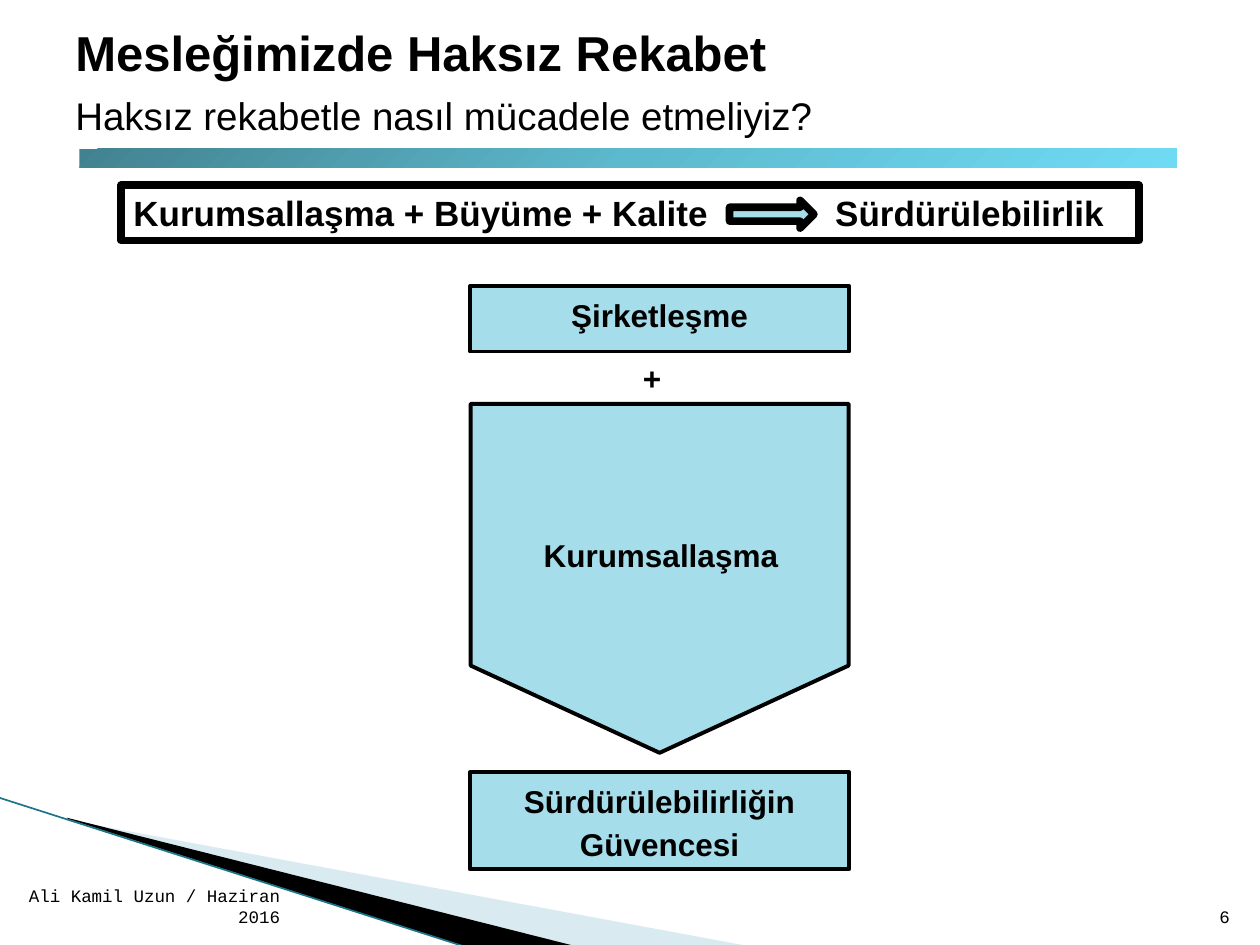
import copy
from dataclasses import dataclass
from typing import Optional

import lxml.etree
import pptx
import pptx.dml.color
import pptx.enum.shapes
import pptx.enum.text
import pptx.oxml.ns
import pptx.util

Inches = pptx.util.Inches
Pt = pptx.util.Pt
Shapes = pptx.enum.shapes.MSO_SHAPE
Align = pptx.enum.text.PP_ALIGN
Anchor = pptx.enum.text.MSO_ANCHOR
qn = pptx.oxml.ns.qn

BLACK, WHITE, AQUA = "000000", "FFFFFF", "A6DDEA"


@dataclass
class Line:
    words: str
    size: float
    bold: bool = True
    font: str = "Arial"
    align: Align = Align.CENTER
    before: float = 0
    after: float = 0
    tab: Optional[float] = None


@dataclass
class Block:
    left: float
    top: float
    width: float
    height: float
    kind: Shapes = Shapes.RECTANGLE
    fill: str = AQUA
    border: float = 0
    rotation: float = 0
    lines: tuple[Line, ...] = ()
    inset: tuple[float, float] = (0.08, 0.08)


def color(hex_value: str) -> pptx.dml.color.RGBColor:
    return pptx.dml.color.RGBColor.from_string(hex_value)


def write(frame, lines: tuple[Line, ...], inset=(0.1, 0.05), anchor=Anchor.TOP, wrap=True) -> None:
    frame.word_wrap = wrap
    frame.vertical_anchor = anchor
    frame.margin_left = frame.margin_right = Inches(inset[0])
    frame.margin_top = frame.margin_bottom = Inches(inset[1])
    for index, line in enumerate(lines):
        paragraph = frame.add_paragraph() if index else frame.paragraphs[0]
        paragraph.alignment = line.align
        paragraph.space_before = Pt(line.before)
        paragraph.space_after = Pt(line.after)
        if line.tab:
            tabs = lxml.etree.SubElement(paragraph._p.get_or_add_pPr(), qn("a:tabLst"))
            lxml.etree.SubElement(tabs, qn("a:tab"), pos=str(Inches(line.tab)), algn="l")
        run = paragraph.add_run()
        run.text = line.words
        run.font.name = line.font
        run.font.size = Pt(line.size)
        run.font.bold = line.bold
        run.font.color.rgb = color(BLACK)


def add_text(slide, left: float, top: float, width: float, height: float,
             *lines: Line, anchor=Anchor.TOP, wrap=True) -> None:
    box = slide.shapes.add_textbox(Inches(left), Inches(top), Inches(width), Inches(height))
    write(box.text_frame, lines, anchor=anchor, wrap=wrap)


def add_block(slide, block: Block):
    shape = slide.shapes.add_shape(block.kind, Inches(block.left), Inches(block.top),
                                   Inches(block.width), Inches(block.height))
    shape.shadow.inherit = False
    shape.rotation = block.rotation
    shape.fill.solid()
    shape.fill.fore_color.rgb = color(block.fill)
    if block.border:
        shape.line.color.rgb = color(BLACK)
        shape.line.width = Pt(block.border)
    else:
        shape.line.fill.background()
    if block.lines:
        write(shape.text_frame, block.lines, block.inset)
    return shape


def add_wedge(slide, points: list[tuple[float, float]], fill: str, opacity: int = 100) -> None:
    corners = [(Inches(x), Inches(y)) for x, y in points]
    builder = slide.shapes.build_freeform(*corners[0])
    builder.add_line_segments(corners[1:], close=True)
    wedge = builder.convert_to_shape()
    wedge.shadow.inherit = False
    wedge.line.fill.background()
    wedge.fill.solid()
    wedge.fill.fore_color.rgb = color(fill)
    if opacity < 100:
        tint = wedge._element.spPr.find(qn("a:solidFill"))[0]
        lxml.etree.SubElement(tint, qn("a:alpha"), val=str(opacity * 1000))


def add_gradient_bar(slide) -> None:
    bar = add_block(slide, Block(0.63, 1.18, 8.71, 0.15))
    bar.fill.gradient()
    bar.fill.gradient_angle = 315
    stop_list = bar._element.spPr.find(qn("a:gradFill")).find(qn("a:gsLst"))
    stop_list.insert(1, copy.deepcopy(stop_list[0]))
    colors = ("428290", "5DB9CD", "6FDBF3")
    for stop, position, shade in zip(bar.fill.gradient_stops, (0, 0.5, 1), colors):
        stop.position = position
        stop.color.rgb = color(shade)


def main() -> None:
    deck = pptx.Presentation()
    deck.slide_width, deck.slide_height = Inches(10), Inches(7.5)
    slide = deck.slides.add_slide(deck.slide_layouts[6])

    # Corner decoration
    add_wedge(slide, [(0.55, 6.51), (5.95, 7.51), (4.56, 7.51), (0.55, 6.5)], "A0CBDC", 40)
    add_wedge(slide, [(0.53, 6.49), (4.57, 7.51), (3.72, 7.52), (0.54, 6.5)], BLACK)
    edge = slide.shapes.add_connector(pptx.enum.shapes.MSO_CONNECTOR.STRAIGHT,
                                      Inches(-0.01), Inches(6.33), Inches(3.71), Inches(7.52))
    edge.line.color.rgb = color("1B7587")
    edge.line.width = Pt(0.95)
    lxml.etree.SubElement(edge._element.spPr, qn("a:effectLst"))

    # Footer and page number
    for left, width, words in ((0, 2.32, "Ali Kamil Uzun / Haziran 2016"), (9.46, 0.4, "6")):
        add_text(slide, left, 7.01, width, 0.4,
                 Line(words, 10, False, "Courier New", Align.RIGHT), anchor=Anchor.BOTTOM)

    # Heading
    add_text(slide, 0.5, 0.13, 9, 0.94,
             Line("Mesleğimizde Haksız Rekabet", 28, align=Align.LEFT),
             Line("Haksız rekabetle nasıl mücadele etmeliyiz?", 22, False, align=Align.LEFT, before=6))
    add_gradient_bar(slide)

    # Flow from incorporation to sustainability
    flow = (
        Block(3.73, 6.13, 3.01, 0.77, border=2.25,
              lines=(Line("Sürdürülebilirliğin", 18, after=2.5), Line("Güvencesi", 18))),
        Block(3.73, 2.27, 3.01, 0.52, border=2.25, lines=(Line("Şirketleşme", 18),)),
    )
    for block in flow:
        add_block(slide, block)
    pentagon = add_block(slide, Block(3.85, 3.09, 2.77, 3, Shapes.PENTAGON, border=2.25, rotation=90))
    pentagon.adjustments[0] = 0.25
    add_block(slide, Block(4.02, 4.21, 2.45, 0.38, lines=(Line("Kurumsallaşma", 18),),
                           inset=(0.04, 0.04)))
    add_text(slide, 4.98, 2.8, 0.39, 0.4, Line("+", 18), wrap=False)

    # Formula banner
    add_block(slide, Block(0.96, 1.47, 8.08, 0.44, fill=WHITE, border=4.33, inset=(0.1, 0.05), lines=(
        Line("Kurumsallaşma + Büyüme + Kalite\tSürdürülebilirlik", 20, align=Align.LEFT, tab=5.57),)))
    add_block(slide, Block(5.79, 1.59, 0.67, 0.22, Shapes.RIGHT_ARROW, border=4.33))

    deck.save("out.pptx")


if __name__ == "__main__":
    main()
